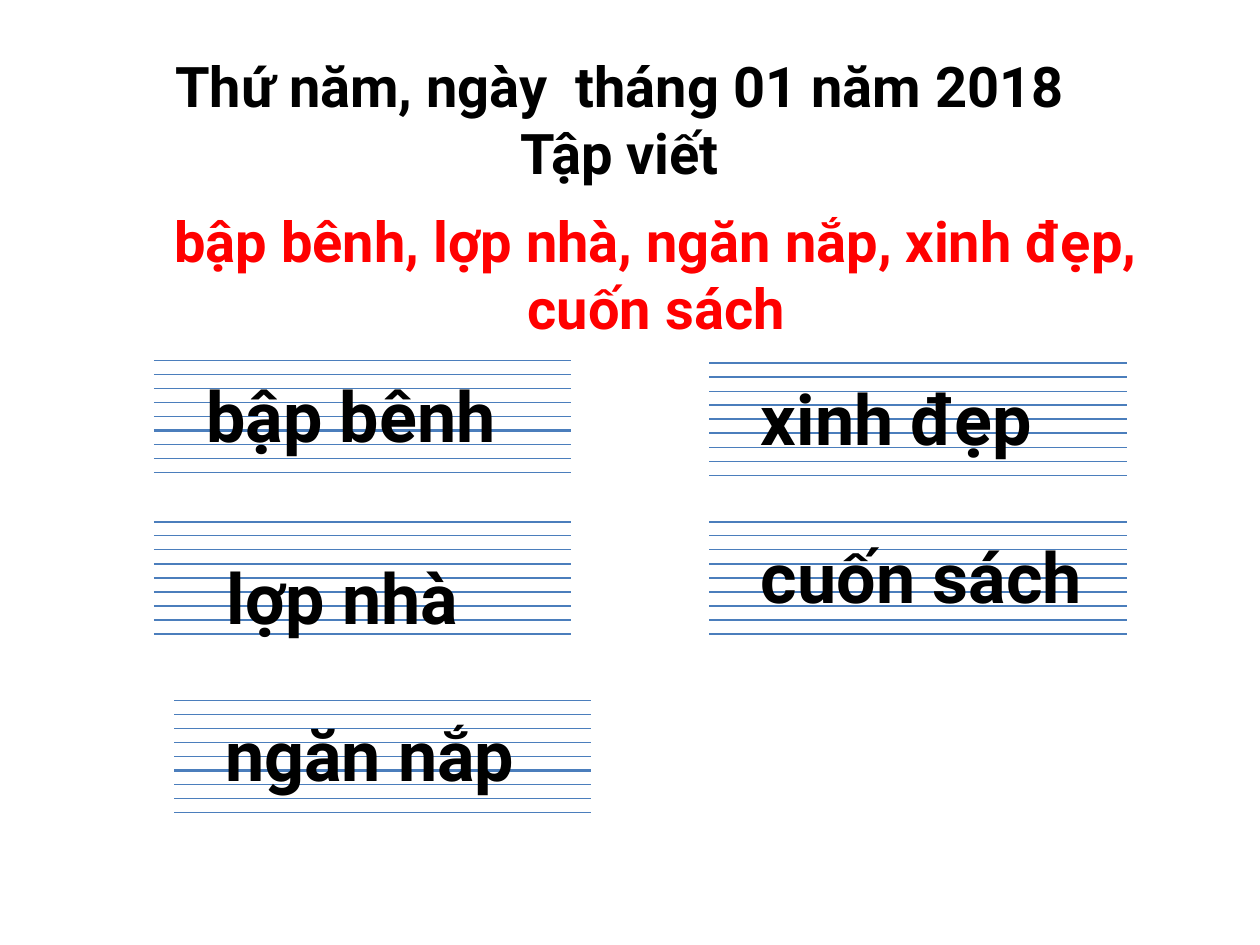
from lxml.etree import SubElement
from pptx import Presentation
from pptx.dml.color import RGBColor
from pptx.enum.shapes import MSO_CONNECTOR as Connector
from pptx.enum.text import MSO_AUTO_SIZE as AutoSize, PP_ALIGN as Align
from pptx.oxml.ns import qn
from pptx.util import Cm, Pt

BLACK = RGBColor(0x00, 0x00, 0x00)
RED = RGBColor(0xFF, 0x00, 0x00)
RULE_BLUE = RGBColor(0x4B, 0x7E, 0xBC)
FONT = "Roboto"

RULE_COUNT = 9
BASELINE = 5  # index of the thicker rule
RULES_WIDTH, RULES_HEIGHT = 8.41, 2.26
WORD_HEIGHT = 1.96

# word, (left, top) of the rules, (left, top, width) of the word, all in cm
PRACTICE = [
    ("ngăn nắp", (3.51, 14.12), (4.29, 14.22, 8.2)),
    ("lợp nhà", (3.1, 10.52), (4.32, 11.05, 6.38)),
    ("bập bênh", (3.1, 7.27), (3.91, 7.39, 7.59)),
    ("xinh đẹp", (14.3, 7.32), (15.09, 7.44, 7.59)),
    ("cuốn sách", (14.3, 10.52), (15.09, 10.64, 8.79)),
]


def add_text(s, text, left, top, width, height, size=40, color=BLACK,
             align=Align.LEFT):
    """Add a bold text box; each line of text becomes a paragraph."""
    sp = s.shapes.add_textbox(Cm(left), Cm(top), Cm(width), Cm(height))
    tf = sp.text_frame
    tf.word_wrap = True
    tf.auto_size = AutoSize.SHAPE_TO_FIT_TEXT
    for i, line in enumerate(text.split("\n")):
        p = tf.add_paragraph() if i else tf.paragraphs[0]
        p.alignment = align
        r = p.add_run()
        r.text = line
        r.font.name = FONT
        r.font.size = Pt(size)
        r.font.bold = True
        r.font.color.rgb = color


def add_rule(shapes, left, y, weight):
    line = shapes.add_connector(Connector.STRAIGHT, Cm(left), Cm(y),
                                Cm(left + RULES_WIDTH), Cm(y))
    line.line.color.rgb = RULE_BLUE
    line.line.width = Pt(weight)
    SubElement(line._element.spPr, qn("a:effectLst"))


def add_writing_rules(s, left, top):
    """Add one group of evenly spaced handwriting rules."""
    group = s.shapes.add_group_shape()
    gap = RULES_HEIGHT / (RULE_COUNT - 1)
    for i in range(RULE_COUNT):
        add_rule(group.shapes, left, top + i * gap,
                 1.5 if i == BASELINE else 0.75)


def main():
    prs = Presentation()
    prs.slide_width, prs.slide_height = Cm(25.4), Cm(19.05)
    s = prs.slides.add_slide(prs.slide_layouts[6])

    add_text(s, "Thứ năm, ngày  tháng 01 năm 2018\nTập viết",
             1.5, 0.91, 22, 3, size=32, align=Align.CENTER)
    add_text(s, "bập bênh, lợp nhà, ngăn nắp, xinh đẹp, cuốn sách",
             2.18, 4.04, 22.1, 3, size=32, color=RED, align=Align.CENTER)
    for word, rules_at, word_box in PRACTICE:
        add_writing_rules(s, *rules_at)
        add_text(s, word, *word_box, WORD_HEIGHT)

    prs.save("out.pptx")


if __name__ == "__main__":
    main()
